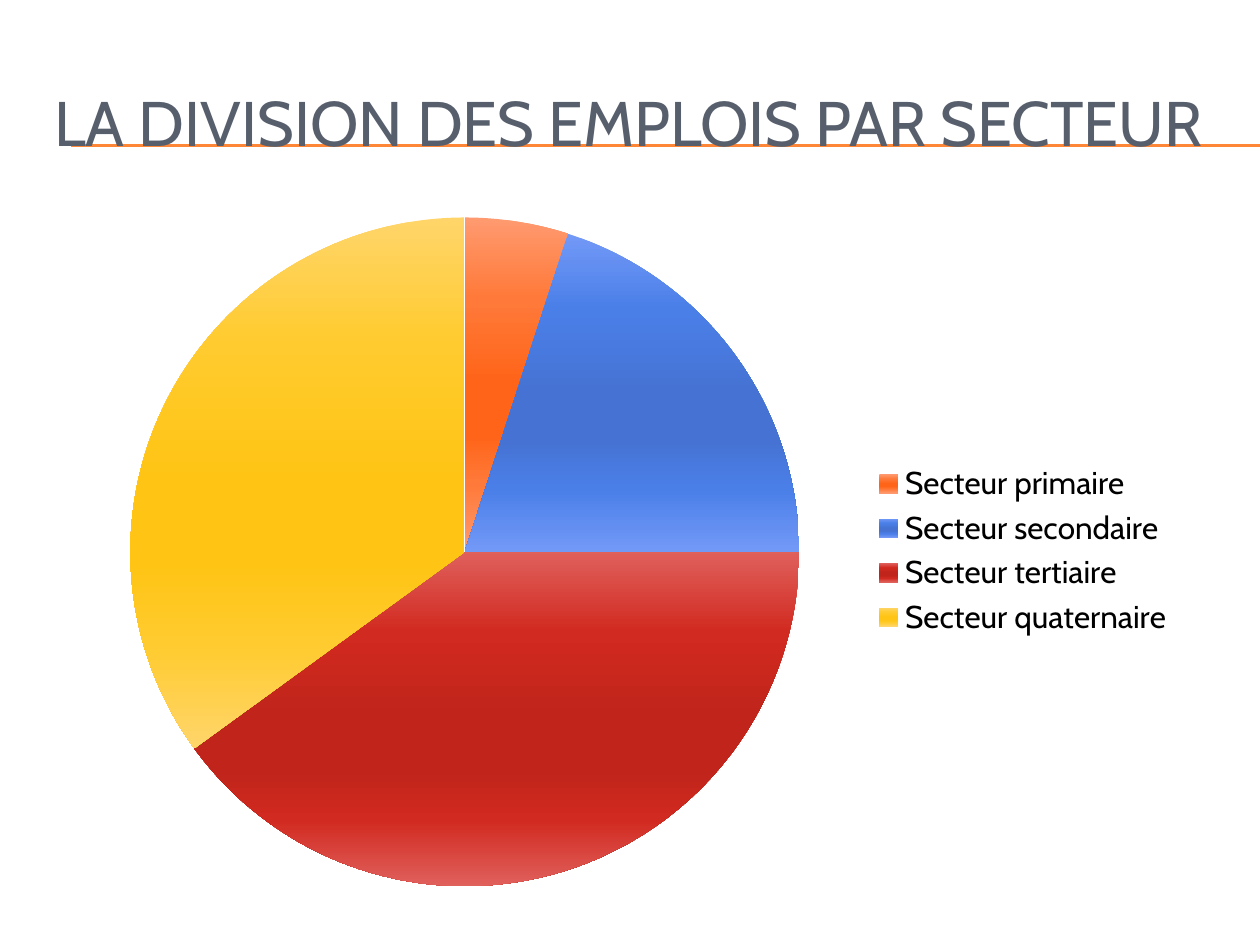
from typing import NamedTuple

from lxml.etree import SubElement
from pptx import Presentation
from pptx.chart.data import CategoryChartData
from pptx.dml.color import RGBColor
from pptx.enum.chart import XL_CHART_TYPE as ChartType, XL_LEGEND_POSITION as LegendPosition
from pptx.enum.shapes import MSO_CONNECTOR as Connector
from pptx.enum.text import MSO_ANCHOR as Anchor, PP_ALIGN as Align
from pptx.oxml.ns import qn
from pptx.util import Emu, Pt

PX_PER_INCH = 126
FONT = "Cabin"
COLORS = {
    "title": "575F6D",
    "rule": "FE8637",
    "legend": "000000",
}


class Box(NamedTuple):
    left: int
    top: int
    width: int
    height: int


class Sector(NamedTuple):
    label: str
    share: int
    edge: str
    middle: str
    core: str


SLIDE = Box(0, 0, 1260, 945)
TITLE = Box(42, 63, 1197, 116)
CHART = Box(63, 199, 1124, 703)
PIE = Box(131, 217, 669, 669)
RULE_LEFT = 71
RULE_TOPS = (145, 146)

SECTORS = [
    Sector("Secteur primaire", 5, "FF9A70", "FF7A3A", "FF6418"),
    Sector("Secteur secondaire", 20, "7399F7", "4A7FE8", "4673D3"),
    Sector("Secteur tertiaire", 40, "E0605C", "D12A20", "C0241A"),
    Sector("Secteur quaternaire", 35, "FFD56A", "FFCB2E", "FFC414"),
]


def px(length: int) -> Emu:
    return Emu(round(length * 914400 / PX_PER_INCH))


def emu_box(box: Box) -> list[Emu]:
    return [px(length) for length in box]


def rgb(name: str) -> RGBColor:
    return RGBColor.from_string(COLORS[name])


def add_rule(slide, top: int) -> None:
    rule = slide.shapes.add_connector(
        Connector.STRAIGHT, px(RULE_LEFT), px(top), px(SLIDE.width), px(top))
    rule.line.color.rgb = rgb("rule")
    rule.line.width = Pt(0.75)
    SubElement(rule._element.spPr, qn("a:effectLst"))


def add_text(slide, box: Box, text: str, *, size: int, color: str,
             anchor: Anchor = Anchor.MIDDLE, align: Align = Align.LEFT) -> None:
    frame = slide.shapes.add_textbox(*emu_box(box)).text_frame
    frame.word_wrap = True
    frame.vertical_anchor = anchor
    paragraph = frame.paragraphs[0]
    paragraph.alignment = align
    run = paragraph.add_run()
    run.text = text
    run.font.name = FONT
    run.font.size = Pt(size)
    run.font.color.rgb = rgb(color)


def fill_slice(point, sector: Sector) -> None:
    """Shade a slice from a light edge to a dark core and back."""
    fill = point.format.fill
    fill.gradient()
    fill.gradient_angle = 270
    stops = point.format._element.find(".//" + qn("a:gsLst"))
    for stop in list(stops):
        stops.remove(stop)
    shades = [(0, sector.edge), (24, sector.middle), (50, sector.core),
              (65, sector.core), (80, sector.middle), (100, sector.edge)]
    for percent, shade in shades:
        stop = SubElement(stops, qn("a:gs"), pos=str(percent * 1000))
        SubElement(stop, qn("a:srgbClr"), val=shade)
    point.format.line.fill.background()


def place_plot(chart, plot: Box, frame: Box) -> None:
    """Fix the plot area at its place within the chart frame."""
    area = chart._chartSpace.chart.plotArea
    for old in area.findall(qn("c:layout")):
        area.remove(old)
    layout = SubElement(area, qn("c:layout"))
    area.insert(0, layout)
    manual = SubElement(layout, qn("c:manualLayout"))
    settings = {
        "layoutTarget": "inner",
        "xMode": "edge",
        "yMode": "edge",
        "x": round((plot.left - frame.left) / frame.width, 3),
        "y": round((plot.top - frame.top) / frame.height, 3),
        "w": round(plot.width / frame.width, 3),
        "h": round(plot.height / frame.height, 3),
    }
    for tag, value in settings.items():
        SubElement(manual, qn(f"c:{tag}"), val=str(value))


def add_sector_pie(slide, sectors: list[Sector]) -> None:
    data = CategoryChartData()
    data.categories = [sector.label for sector in sectors]
    data.add_series("Series 1", [sector.share for sector in sectors])
    chart = slide.shapes.add_chart(ChartType.PIE, *emu_box(CHART), data).chart
    chart.has_title = False
    chart.font.name = FONT
    chart.font.size = Pt(18)
    chart.font.color.rgb = rgb("legend")
    chart.has_legend = True
    chart.legend.position = LegendPosition.RIGHT
    chart.legend.include_in_layout = False
    pie = chart.plots[0]
    pie.vary_by_categories = True
    for index, sector in enumerate(sectors):
        fill_slice(pie.series[0].points[index], sector)
    place_plot(chart, PIE, CHART)


def main() -> None:
    presentation = Presentation()
    presentation.slide_width = px(SLIDE.width)
    presentation.slide_height = px(SLIDE.height)
    slide = presentation.slides.add_slide(presentation.slide_layouts[6])
    for top in RULE_TOPS:
        add_rule(slide, top)
    add_text(slide, TITLE, "LA DIVISION DES EMPLOIS PAR SECTEUR", size=36, color="title")
    add_sector_pie(slide, SECTORS)
    presentation.save("out.pptx")


if __name__ == "__main__":
    main()
